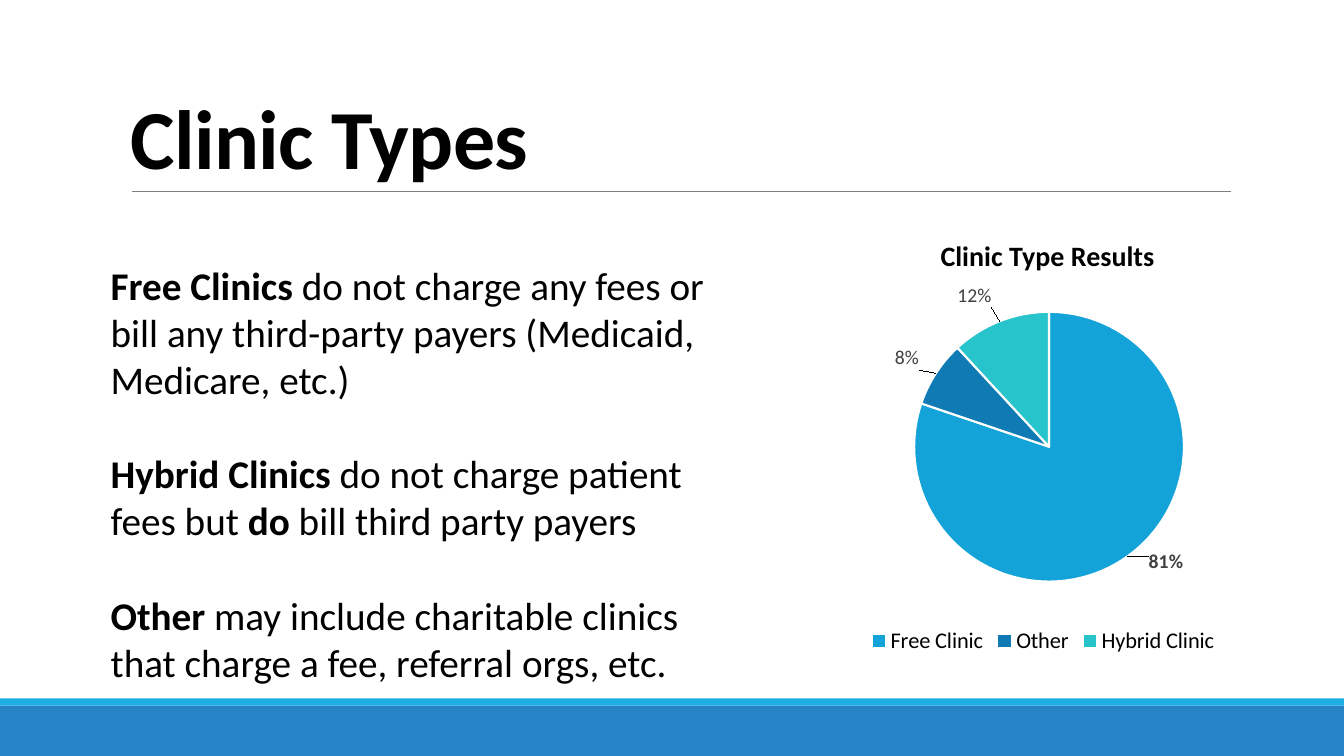
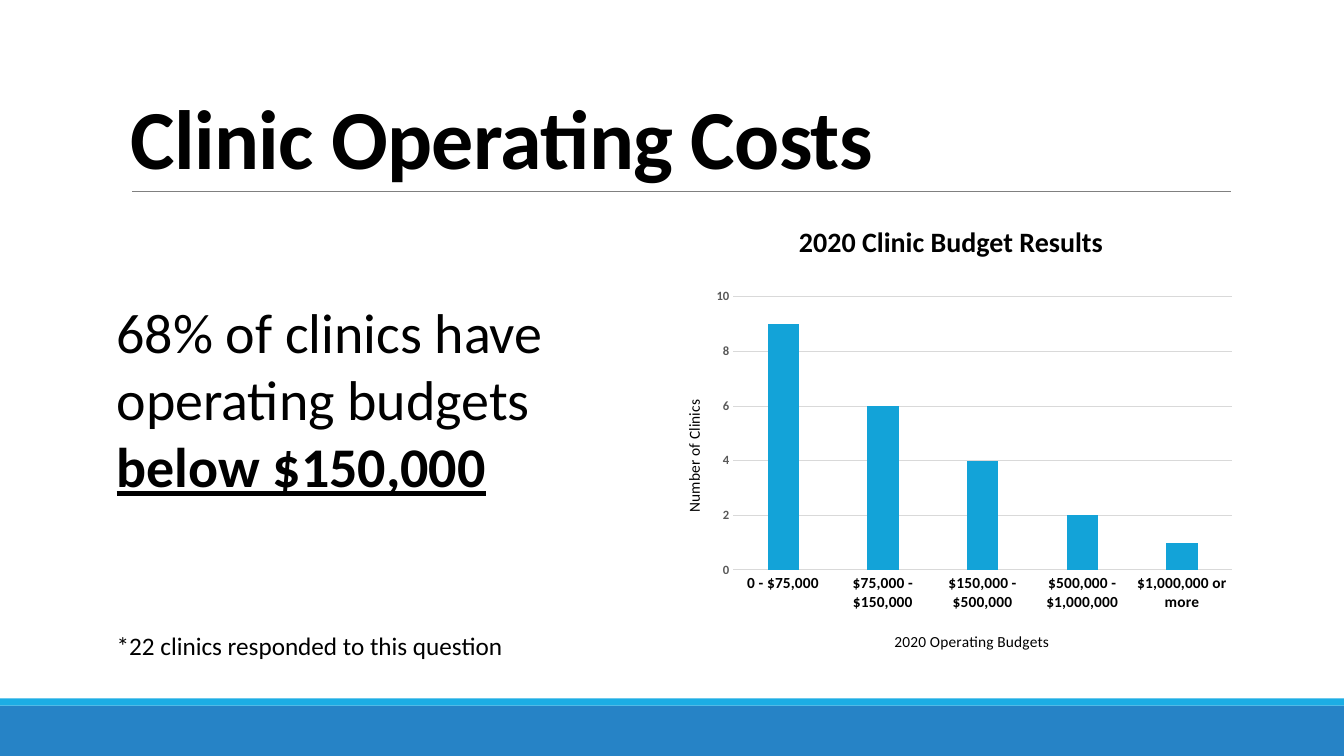
from lxml.etree import SubElement
from pptx import Presentation
from pptx.chart.data import CategoryChartData
from pptx.dml.color import RGBColor
from pptx.enum.chart import XL_CHART_TYPE, XL_LABEL_POSITION, XL_LEGEND_POSITION, XL_TICK_MARK
from pptx.enum.shapes import MSO_CONNECTOR, MSO_SHAPE
from pptx.enum.text import MSO_ANCHOR, PP_ALIGN
from pptx.oxml import parse_xml
from pptx.oxml.ns import qn
from pptx.util import Cm, Pt

BLACK = RGBColor(0x00, 0x00, 0x00)
WHITE = RGBColor(0xFF, 0xFF, 0xFF)
BAND_BLUE = RGBColor(0x26, 0x83, 0xC6)
STRIP_BLUE = RGBColor(0x1C, 0xAD, 0xE4)
RULE_GRAY = RGBColor(0x80, 0x80, 0x80)
GRID_GRAY = RGBColor(0xD9, 0xD9, 0xD9)
LABEL_GRAY = RGBColor(0x40, 0x40, 0x40)
TICK_GRAY = RGBColor(0x59, 0x59, 0x59)
SKY = RGBColor(0x13, 0xA3, 0xD8)
NAVY = RGBColor(0x0F, 0x7A, 0xB4)
TEAL = RGBColor(0x28, 0xC4, 0xCC)
FONT = "Calibri"
CHART_NS = "http://schemas.openxmlformats.org/drawingml/2006/chart"


def add_text(page, paragraphs, left, top, width, height, size, align=PP_ALIGN.LEFT,
             anchor=MSO_ANCHOR.TOP, line_spacing=None, gap=0, tracking=None):
    """Each paragraph is a list of (text, style) with style "", "b" or "bu"."""
    box = page.shapes.add_textbox(Cm(left), Cm(top), Cm(width), Cm(height))
    frame = box.text_frame
    frame.word_wrap = True
    frame.vertical_anchor = anchor
    for number, pieces in enumerate(paragraphs):
        para = frame.add_paragraph() if number else frame.paragraphs[0]
        para.alignment = align
        para.line_spacing = line_spacing
        para.space_before = Pt(gap if number else 0)
        for text, style in pieces:
            span = para.add_run()
            span.text = text
            span.font.name = FONT
            span.font.size = Pt(size)
            span.font.color.rgb = BLACK
            span.font.bold = "b" in style
            span.font.underline = "u" in style
            if tracking:
                span.font._element.set("spc", str(tracking))


def set_layout(parent, index, inner=False, **fractions):
    """Places a chart part by fractions of the chart's size."""
    for old in parent.findall(qn("c:layout")):
        parent.remove(old)
    layout = parse_xml(f'<c:layout xmlns:c="{CHART_NS}"><c:manualLayout/></c:layout>')
    manual = layout[0]
    settings = dict(fractions)
    if inner:
        settings = {"layoutTarget": "inner", "xMode": "edge", "yMode": "edge", **fractions}
    elif parent.tag == qn("c:title"):
        settings = {"xMode": "edge", "yMode": "edge", **fractions}
    for name, value in settings.items():
        SubElement(manual, qn(f"c:{name}")).set("val", str(value))
    parent.insert(index, layout)


deck = Presentation()
deck.slide_width = Cm(33.87)
deck.slide_height = Cm(19.05)

# Shared frame: bands, rule and title
pages = []
for title in ("Clinic Types", "Clinic Operating Costs"):
    page = deck.slides.add_slide(deck.slide_layouts[6])
    for top, height, color in ((17.78, 1.27, BAND_BLUE), (17.6, 0.18, STRIP_BLUE)):
        band = page.shapes.add_shape(MSO_SHAPE.RECTANGLE, 0, Cm(top), deck.slide_width, Cm(height))
        band.shadow.inherit = False
        band.fill.solid()
        band.fill.fore_color.rgb = color
        band.line.fill.background()
    rule = page.shapes.add_connector(MSO_CONNECTOR.STRAIGHT, Cm(3.33), Cm(4.83), Cm(31.01), Cm(4.83))
    rule.line.color.rgb = RULE_GRAY
    rule.line.width = Pt(0.5)
    SubElement(rule._element.spPr, qn("a:effectLst"))
    add_text(page, [[(title, "b")]], 3.05, 0.79, 27.94, 4.04, 60,
             anchor=MSO_ANCHOR.BOTTOM, line_spacing=0.85, tracking=-50)
    pages.append(page)
types_page, costs_page = pages

# Clinic types: pie chart
data = CategoryChartData(number_format='0"%"')
data.categories = ["Free Clinic", "Other", "Hybrid Clinic"]
data.add_series("Series 1", (81, 8, 12))
pie = types_page.shapes.add_chart(XL_CHART_TYPE.PIE, Cm(18.9), Cm(6.88), Cm(14.78), Cm(9.73), data).chart
pie.has_title = False
pie.font.name = FONT
pie.font.size = Pt(10)
pie.font.color.rgb = BLACK
pie.has_legend = True
pie.legend.position = XL_LEGEND_POSITION.BOTTOM
pie.legend.include_in_layout = False
pie.legend.font.name = FONT
pie.legend.font.size = Pt(16)
pie.legend.font.color.rgb = BLACK
plot = pie.plots[0]
plot.vary_by_categories = True
labels = plot.series[0].data_labels
labels.show_value = True
labels.number_format = '0"%"'
labels.number_format_is_linked = False
labels.position = XL_LABEL_POSITION.OUTSIDE_END
for number, (color, bold) in enumerate(((SKY, True), (NAVY, False), (TEAL, False))):
    point = plot.series[0].points[number]
    point.format.fill.solid()
    point.format.fill.fore_color.rgb = color
    point.format.line.color.rgb = WHITE
    point.format.line.width = Pt(1.5)
    label = point.data_label
    label.font.name = FONT
    label.font.size = Pt(14)
    label.font.bold = bold
    label.font.color.rgb = LABEL_GRAY
    label.position = XL_LABEL_POSITION.OUTSIDE_END
shifts = ((0.03, -0.03), (-0.02, 0), (-0.01, -0.02))
for label, (across, down) in zip(pie._chartSpace.xpath(".//c:dLbl"), shifts):
    set_layout(label, 1, x=across, y=down)
set_layout(pie._chartSpace.xpath(".//c:plotArea")[0], 0, inner=True, x=0.28, y=0.1, w=0.46, h=0.7)

# Clinic types: definitions and chart heading
definitions = [
    [("Free Clinics ", "b"),
     ("do not charge any fees or bill any third-party payers (Medicaid, Medicare, etc.)", "")],
    [("Hybrid Clinics ", "b"), ("do not charge patient fees but ", ""),
     ("do", "b"), (" bill third party payers", "")],
    [("Other", "b"), (" may include charitable clinics that charge a fee, referral orgs, etc.", "")],
]
add_text(types_page, definitions, 2.54, 6.45, 16.56, 12.32, 28, gap=34)
add_text(types_page, [[("Clinic Type Results", "b")]], 21.23, 5.89, 10.34, 1.12, 20,
         align=PP_ALIGN.CENTER)

# Operating costs: column chart
data = CategoryChartData(number_format="0")
data.categories = ["0 - $75,000", "$75,000 - $150,000", "$150,000 - $500,000",
                   "$500,000 - $1,000,000", "$1,000,000 or more"]
data.add_series("Series 1", (9, 6, 4, 2, 1))
columns = costs_page.shapes.add_chart(XL_CHART_TYPE.COLUMN_CLUSTERED, Cm(16.56), Cm(7.09),
                                      Cm(14.78), Cm(9.7), data).chart
columns.has_title = False
columns.has_legend = False
columns.font.name = FONT
columns.font.size = Pt(10)
columns.font.color.rgb = BLACK
plot = columns.plots[0]
plot.vary_by_categories = False
plot.gap_width = 219
plot.overlap = -27
plot.series[0].format.fill.solid()
plot.series[0].format.fill.fore_color.rgb = SKY

budgets, counts = columns.category_axis, columns.value_axis
for axis, title, size, color, across, down in (
        (budgets, "2020 Operating Budgets", 11, BLACK, 0.4, 0.9),
        (counts, "Number of Clinics", 9, TICK_GRAY, 0.04, 0.3)):
    axis.major_tick_mark = XL_TICK_MARK.NONE
    axis.minor_tick_mark = XL_TICK_MARK.NONE
    axis.tick_labels.font.name = FONT
    axis.tick_labels.font.size = Pt(size)
    axis.tick_labels.font.bold = True
    axis.tick_labels.font.color.rgb = color
    axis.has_title = True
    frame = axis.axis_title.text_frame
    frame.text = title
    font = frame.paragraphs[0].runs[0].font
    font.name = FONT
    font.size = Pt(11)
    font.bold = False
    font.color.rgb = BLACK
    set_layout(axis.axis_title._element, 1, x=across, y=down)
counts.minimum_scale = 0
counts.maximum_scale = 10
counts.major_unit = 2
counts.format.line.fill.background()
for line in (budgets.format.line, counts.major_gridlines.format.line):
    line.color.rgb = GRID_GRAY
    line.width = Pt(0.75)
set_layout(columns._chartSpace.xpath(".//c:plotArea")[0], 0, inner=True, x=0.13, y=0.04, w=0.85, h=0.71)

# Operating costs: chart heading, finding and footnote
add_text(costs_page, [[("2020 Clinic Budget Results", "b")]], 18.8, 5.54, 10.34, 1.12, 20,
         align=PP_ALIGN.CENTER)
add_text(costs_page, [[("68% of clinics have operating budgets ", ""), ("below $150,000", "bu")]],
         2.69, 7.37, 11.71, 5.38, 40)
add_text(costs_page, [[("*22 clinics responded to this question", "")]], 2.69, 15.75, 10.62, 1.02, 18)

deck.save("out.pptx")
